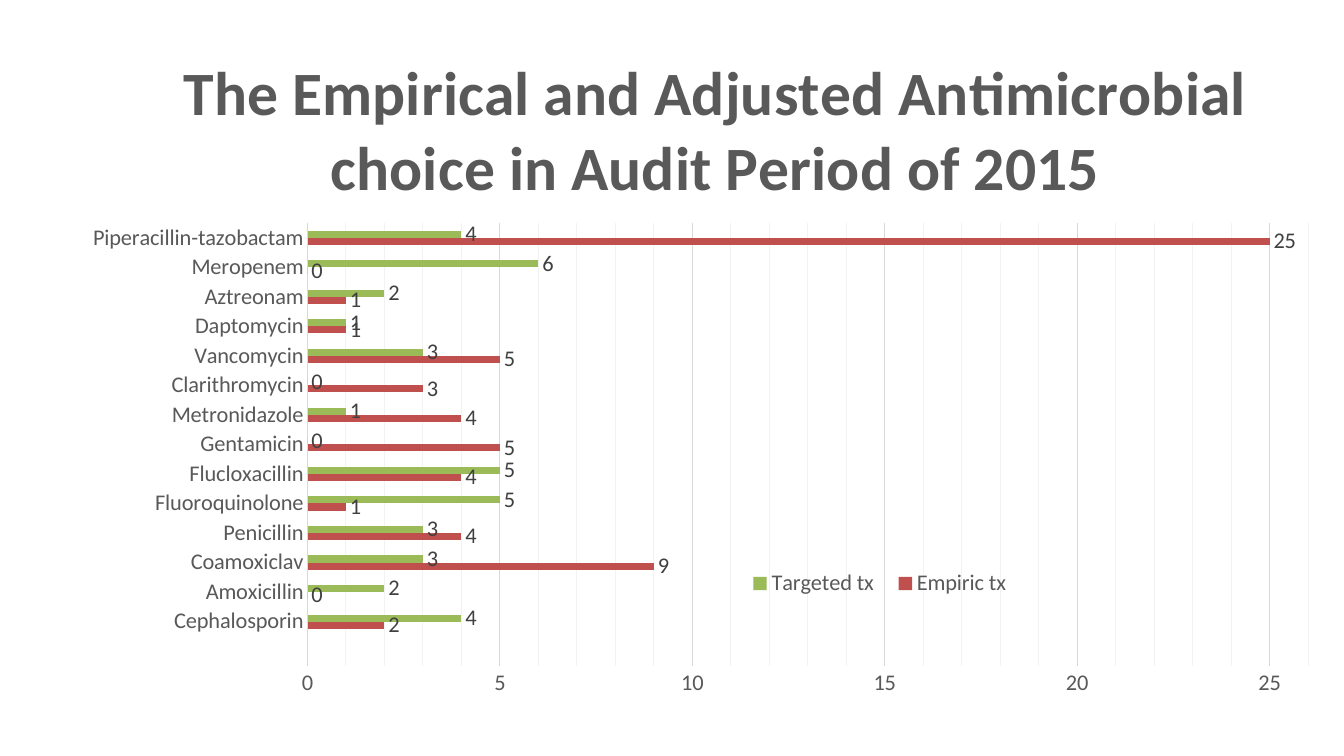
from copy import deepcopy

from lxml import etree
from pptx import Presentation
from pptx.chart.data import CategoryChartData
from pptx.dml.color import RGBColor
from pptx.enum.chart import (XL_CHART_TYPE as ChartType, XL_LABEL_POSITION as LabelPos,
                             XL_LEGEND_POSITION as LegendPos, XL_TICK_MARK as Tick)
from pptx.oxml.ns import qn
from pptx.util import Inches, Pt

# Content
TITLE = "The Empirical and Adjusted Antimicrobial choice in Audit Period of 2015"
SERIES = [("Empiric tx", "C0504D"), ("Targeted tx", "9BBB59")]
ROWS = [  # antimicrobial, empiric, targeted; bottom to top
    ("", None, None),
    ("Cephalosporin", 2, 4),
    ("Amoxicillin", 0, 2),
    ("Coamoxiclav", 9, 3),
    ("Penicillin", 4, 3),
    ("Fluoroquinolone", 1, 5),
    ("Flucloxacillin", 4, 5),
    ("Gentamicin", 5, 0),
    ("Metronidazole", 4, 1),
    ("Clarithromycin", 3, 0),
    ("Vancomycin", 5, 3),
    ("Daptomycin", 1, 1),
    ("Aztreonam", 1, 2),
    ("Meropenem", 0, 6),
    ("Piperacillin-tazobactam", 25, 4),
]
FONT, GREY, LABEL, GRID, MINOR = "Calibri", "595959", "404040", "D9D9D9", "F2F2F2"

# Places as shares of the chart frame
TITLE_AT = {"x": 0.075, "y": 0.05}
PLOT_AT = {"x": 0.169, "y": 0.295, "w": 0.803, "h": 0.586}
LEGEND_AT = {"x": 0.467, "y": 0.752, "w": 0.2, "h": 0.04}


def rgb(value):
    return RGBColor.from_string(value)


def set_font(font, color, size=16, bold=False):
    font.name, font.size, font.bold = FONT, Pt(size), bold
    font.color.rgb = rgb(color)


def set_line(line, color):
    line.color.rgb = rgb(color)
    line.width = Pt(0.75)


def place(element, at, index, inner=False):
    """Give a chart part a manual layout, as its child number index."""
    for old in element.findall(qn("c:layout")):
        element.remove(old)
    layout = etree.Element(qn("c:layout"))
    manual = etree.SubElement(layout, qn("c:manualLayout"))
    settings = [("layoutTarget", "inner")] if inner else []
    settings += [("xMode", "edge"), ("yMode", "edge"), *at.items()]
    for name, value in settings:
        etree.SubElement(manual, qn("c:" + name)).set("val", str(value))
    element.insert(index, layout)


prs = Presentation()
prs.slide_width, prs.slide_height = Inches(13.33), Inches(7.5)
s = prs.slides.add_slide(prs.slide_layouts[6])

# Chart
data = CategoryChartData(number_format="General")
data.categories = [row[0] for row in ROWS]
for i, (name, _) in enumerate(SERIES, 1):
    data.add_series(name, [row[i] for row in ROWS])
chart = s.shapes.add_chart(ChartType.BAR_CLUSTERED, Inches(0.64), 0,
                           Inches(14.26), prs.slide_height, data).chart
set_font(chart.font, "000000")
place(chart._chartSpace.chart.plotArea, PLOT_AT, 0, inner=True)

# Title
tf = chart.chart_title.text_frame
tf.text = TITLE
set_font(tf.paragraphs[0].runs[0].font, GREY, 44, True)
place(chart.chart_title._element, TITLE_AT, 1)

# Bars and their values
plot = chart.plots[0]
plot.gap_width, plot.overlap, plot.vary_by_categories = 219, 0, False
for series, (_, color) in zip(plot.series, SERIES):
    series.format.fill.solid()
    series.format.fill.fore_color.rgb = rgb(color)
    series.invert_if_negative = False
    labels = series.data_labels
    labels.show_value, labels.position = True, LabelPos.OUTSIDE_END
    set_font(labels.font, LABEL)

# Axes and grid
cat, val = chart.category_axis, chart.value_axis
for axis in (cat, val):
    axis.major_tick_mark = axis.minor_tick_mark = Tick.NONE
    set_font(axis.tick_labels.font, GREY)
set_line(cat.format.line, GRID)
val.format.line.fill.background()
val.minimum_scale, val.maximum_scale = 0, 30
val.major_unit, val.minor_unit = 5, 1
val.has_major_gridlines = True
set_line(val.major_gridlines.format.line, GRID)

# Minor grid: the major lines' format in a lighter grey
major = val._element.find(qn("c:majorGridlines"))
minor = etree.Element(qn("c:minorGridlines"))
minor.extend(deepcopy(child) for child in major)
for color in minor.iter(qn("a:srgbClr")):
    color.set("val", MINOR)
major.addnext(minor)

# Legend
chart.has_legend = True
legend = chart.legend
legend.position, legend.include_in_layout = LegendPos.BOTTOM, False
set_font(legend.font, GREY)
place(legend._element, LEGEND_AT, 1)

prs.save("out.pptx")
